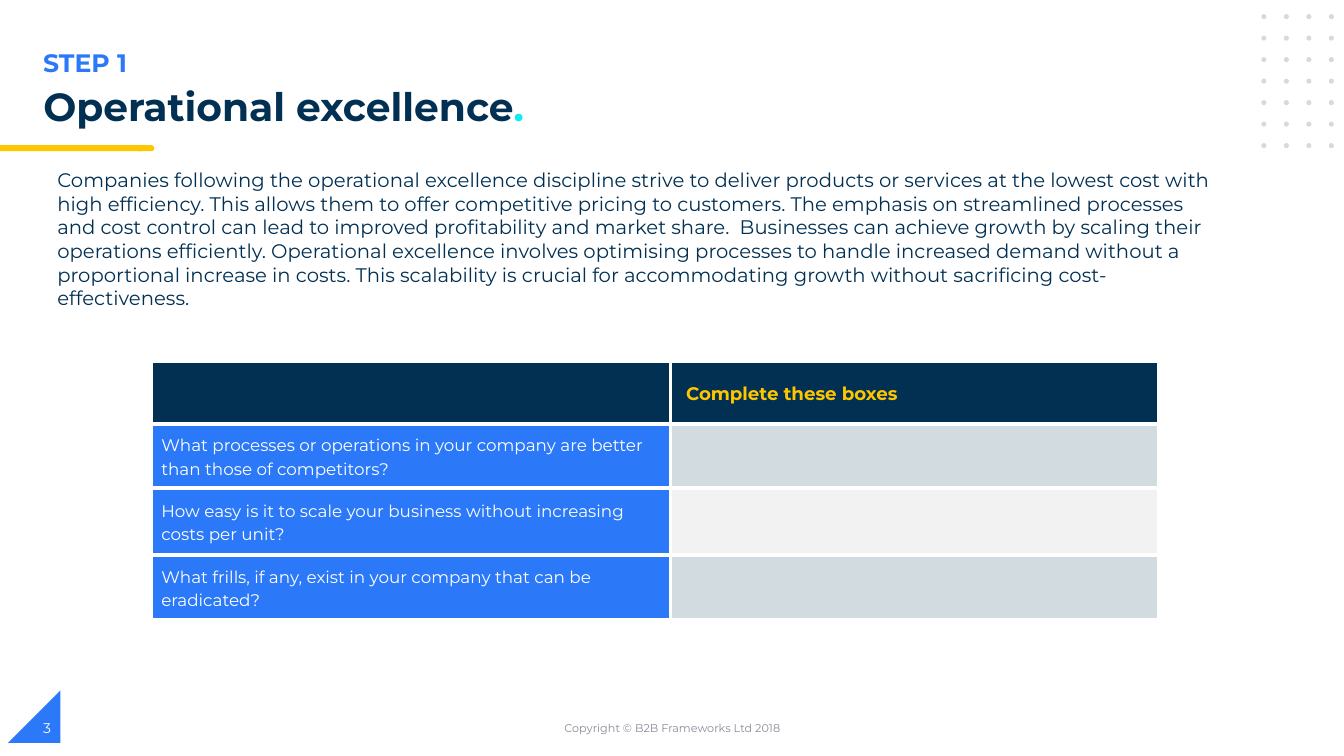
"""Builds the "Operational excellence" worksheet slide."""
from itertools import product

from lxml.etree import SubElement
from pptx import Presentation
from pptx.dml.color import RGBColor
from pptx.enum.shapes import MSO_SHAPE as Shape
from pptx.enum.text import MSO_ANCHOR as Anchor, MSO_AUTO_SIZE as AutoSize, PP_ALIGN as Align
from pptx.oxml.ns import qn
from pptx.util import Inches, Pt

NAVY = RGBColor(0x02, 0x30, 0x53)
BLUE = RGBColor(0x2B, 0x79, 0xF8)
YELLOW = RGBColor(0xFF, 0xC6, 0x00)
CYAN = RGBColor(0x0E, 0xEC, 0xEC)
MIST = RGBColor(0xD1, 0xDB, 0xE0)
PALE = RGBColor(0xF2, 0xF2, 0xF2)
GREY = RGBColor(0x88, 0x8C, 0x97)
WHITE = RGBColor(0xFF, 0xFF, 0xFF)
BLACK = RGBColor(0, 0, 0)

INTRO = (
    "Companies following the operational excellence discipline strive to deliver products or "
    "services at the lowest cost with high efficiency. This allows them to offer competitive "
    "pricing to customers. The emphasis on streamlined processes and cost control can lead to "
    "improved profitability and market share.  Businesses can achieve growth by scaling their "
    "operations efficiently. Operational excellence involves optimising processes to handle "
    "increased demand without a proportional increase in costs. This scalability is crucial for "
    "accommodating growth without sacrificing cost-effectiveness."
)
QUESTIONS = [
    ("What processes or operations in your company are better than those of competitors?", MIST),
    ("How easy is it to scale your business without increasing costs per unit?", PALE),
    ("What frills, if any, exist in your company that can be eradicated?", MIST),
]
COLUMN_WIDTHS = [5.15, 4.84]
ROW_HEIGHTS = [0.63, 0.63, 0.67, 0.64]


def write(paragraph, text, size=12, color=NAVY, bold=False, font="Montserrat",
          align=Align.LEFT, spacing=None):
    """Append a formatted run to a paragraph."""
    paragraph.alignment = align
    if spacing:
        paragraph.line_spacing = spacing
    run = paragraph.add_run()
    run.text = text
    run.font.name = font
    run.font.size = Pt(size)
    run.font.bold = bold
    run.font.color.rgb = color


def add_text(slide, box, text, anchor=Anchor.TOP, **style):
    """Add a wrapping text box."""
    frame = slide.shapes.add_textbox(*map(Inches, box)).text_frame
    frame.word_wrap = True
    frame.vertical_anchor = anchor
    write(frame.paragraphs[0], text, **style)


def add_mark(slide, kind, box, color, rotation=0):
    """Add a plain filled decorative shape."""
    mark = slide.shapes.add_shape(kind, *map(Inches, box))
    mark.shadow.inherit = False
    mark.fill.solid()
    mark.fill.fore_color.rgb = color
    mark.line.fill.background()
    mark.rotation = rotation


def add_decoration(slide):
    """Draw the corner triangle, the title underline and the dot grid."""
    add_mark(slide, Shape.RIGHT_TRIANGLE, (0.08, 6.85, 0.52, 0.52), BLUE, rotation=270)
    add_mark(slide, Shape.FLOWCHART_TERMINATOR, (1.34, 1.44, 0.19, 0.06), YELLOW)
    add_mark(slide, Shape.RECTANGLE, (0, 1.44, 1.41, 0.06), YELLOW)
    for row, column in product(range(7), range(4)):
        dot = (12.51 + 0.2233 * column, 0.14 + 0.2133 * row, 0.05, 0.05)
        add_mark(slide, Shape.OVAL, dot, MIST)


def set_title(slide):
    """Place and format the slide title."""
    title = slide.shapes.title
    title.left, title.top, title.width, title.height = map(Inches, (0.33, 0.82, 11.23, 0.4))
    frame = title.text_frame
    frame.auto_size = AutoSize.NONE
    frame.vertical_anchor = Anchor.TOP
    heading = frame.paragraphs[0]
    write(heading, "Operational excellence", size=28, bold=True, spacing=0.9)
    write(heading, ".", size=28, bold=True, color=CYAN, spacing=0.9)


def style_cell(cell, color):
    """Give a table cell its borders, fill and margins."""
    properties = cell._tc.get_or_add_tcPr()
    for side in ("a:lnL", "a:lnR", "a:lnT", "a:lnB"):
        border = SubElement(properties, qn(side), w=str(Pt(3)))
        paint = SubElement(border, qn("a:solidFill"))
        SubElement(paint, qn("a:srgbClr"), val=str(WHITE))
    cell.fill.solid()
    cell.fill.fore_color.rgb = color
    cell.margin_top = cell.margin_bottom = 0
    cell.vertical_anchor = Anchor.MIDDLE


def add_worksheet(slide):
    """Add the table of questions and boxes to complete."""
    size = (sum(COLUMN_WIDTHS), sum(ROW_HEIGHTS))
    table = slide.shapes.add_table(
        len(ROW_HEIGHTS), len(COLUMN_WIDTHS), *map(Inches, (1.5, 3.58, *size))).table
    table.first_row = table.horz_banding = False
    for column, width in zip(table.columns, COLUMN_WIDTHS):
        column.width = Inches(width)
    for row, height in zip(table.rows, ROW_HEIGHTS):
        row.height = Inches(height)

    for column in range(2):
        style_cell(table.cell(0, column), NAVY)
    header = table.cell(0, 1).text_frame.paragraphs[0]
    write(header, " ", size=14, color=BLACK, font="Arial", spacing=1.15)
    write(header, "Complete these boxes", size=13, color=YELLOW, bold=True, spacing=1.15)

    for row, (question, answer_color) in enumerate(QUESTIONS, start=1):
        prompt = table.cell(row, 0)
        style_cell(prompt, BLUE)
        write(prompt.text_frame.paragraphs[0], question, color=WHITE, spacing=1.15)
        style_cell(table.cell(row, 1), answer_color)


def main():
    """Build and save the slide."""
    deck = Presentation()
    deck.slide_width, deck.slide_height = Inches(13.33), Inches(7.5)
    slide = deck.slides.add_slide(deck.slide_layouts[5])
    add_decoration(slide)
    add_text(slide, (0.33, 0.42, 6.69, 0.4), "STEP 1", size=18, color=BLUE, bold=True)
    set_title(slide)
    add_text(slide, (0.47, 1.62, 11.78, 1.28), INTRO, size=14)
    add_worksheet(slide)
    add_text(slide, (4.42, 7.02, 4.5, 0.4), "Copyright © B2B Frameworks Ltd 2018",
             anchor=Anchor.MIDDLE, size=8, color=GREY, align=Align.CENTER)
    add_text(slide, (0.33, 7.02, 3, 0.4), "3", anchor=Anchor.MIDDLE, size=10, color=WHITE)
    deck.save("out.pptx")


if __name__ == "__main__":
    main()
